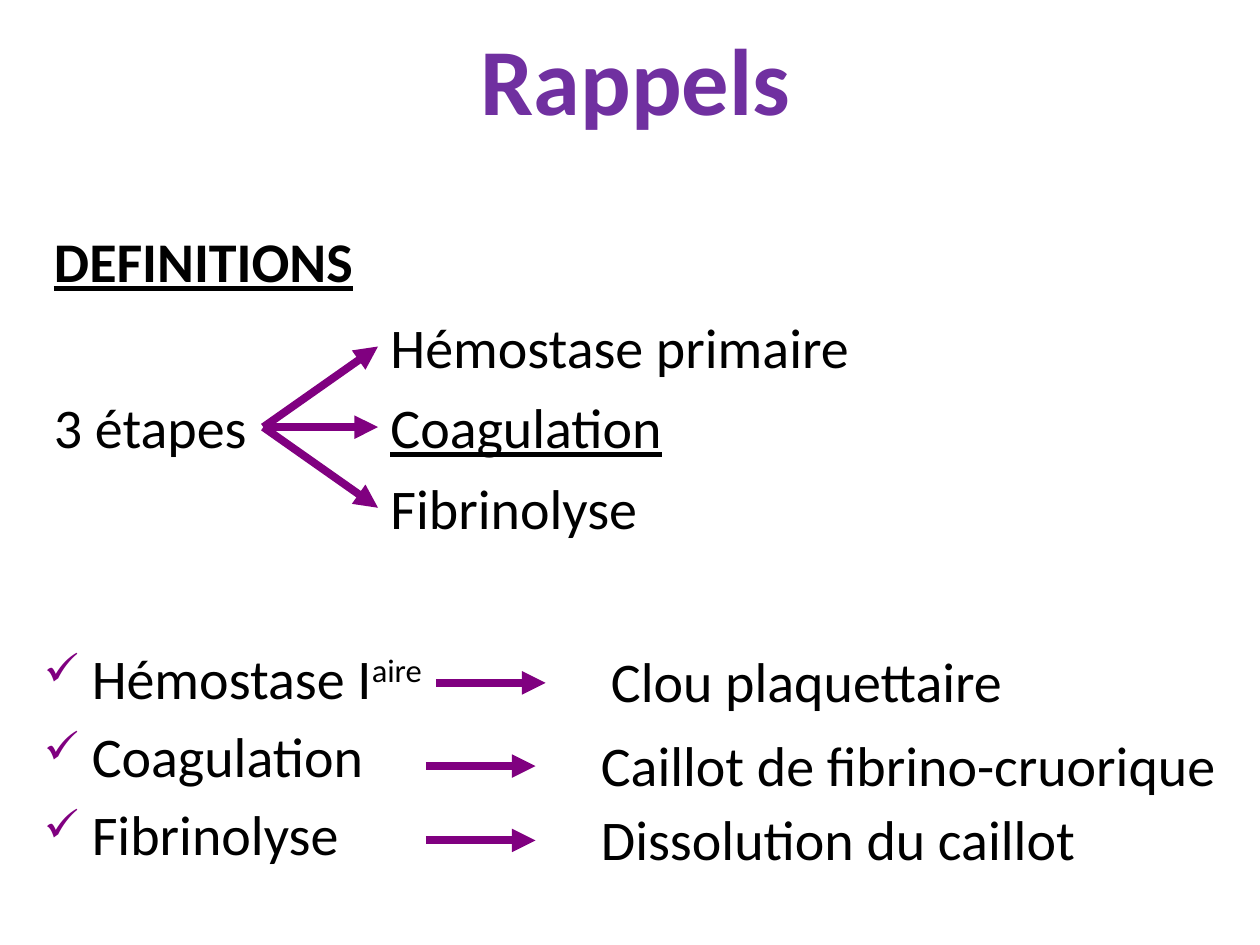
"""Build the "Rappels" slide on the three stages of haemostasis."""
from lxml.etree import SubElement
from pptx import Presentation
from pptx.dml.color import RGBColor
from pptx.enum.shapes import MSO_CONNECTOR as Connector
from pptx.enum.text import MSO_ANCHOR as Anchor, PP_ALIGN as Align
from pptx.oxml.ns import qn
from pptx.util import Inches, Pt

TITLE = "Rappels"
HEADING = "DEFINITIONS"
SOURCE = "3 étapes"
STAGES = [("Hémostase primaire", False), ("Coagulation", True), ("Fibrinolyse", False)]
CHECKLIST = [("Hémostase I", "aire"), ("Coagulation", ""), ("Fibrinolyse", "")]
OUTCOMES = [
    ("Clou plaquettaire", 3.46, 5.42),
    ("Caillot de fibrino-cruorique", 3.38, 6.08),
    ("Dissolution du caillot", 3.38, 6.67),
]

FONT = "Calibri"
BLACK, VIOLET, PURPLE = "000000", "7030A0", "800080"
STAGE_LEFT, STAGE_TOP, STAGE_PITCH = 3, 2.43, 0.64
ARROW_LENGTH, OUTCOME_OFFSET, OUTCOME_HEIGHT = 0.87, 1.29, 0.67
HANGING = 0.38


def color(value):
    return RGBColor.from_string(value)


def add_run(paragraph, text, size=32, fill=BLACK, bold=False, underline=False, raised=False):
    run = paragraph.add_run()
    run.text = text
    font = run.font
    font.name, font.size, font.bold, font.underline = FONT, Pt(size), bold, underline
    font.color.rgb = color(fill)
    if raised:
        run._r.get_or_add_rPr().set("baseline", "30000")


def add_text(slide, box, text="", align=Align.LEFT, anchor=Anchor.TOP, wrap=True, **style):
    shape = slide.shapes.add_textbox(*map(Inches, box))
    frame = shape.text_frame
    frame.word_wrap, frame.vertical_anchor = wrap, anchor
    frame.paragraphs[0].alignment = align
    if text:
        add_run(frame.paragraphs[0], text, **style)
    return shape


def add_arrow(slide, start=(0, 0), end=(0, 0)):
    arrow = slide.shapes.add_connector(Connector.STRAIGHT, *map(Inches, start + end))
    arrow.line.color.rgb = color(PURPLE)
    arrow.line.width = Pt(4.5)
    SubElement(arrow.line._get_or_add_ln(), qn("a:tailEnd"), type="triangle")
    SubElement(arrow._element.spPr, qn("a:effectLst"))
    return arrow


def add_check(paragraph):
    properties = paragraph._p.get_or_add_pPr()
    properties.set("marL", str(Inches(HANGING)))
    properties.set("indent", str(-Inches(HANGING)))
    SubElement(SubElement(properties, qn("a:buClr")), qn("a:srgbClr"), val=PURPLE)
    SubElement(properties, qn("a:buSzPct"), val="80000")
    SubElement(properties, qn("a:buChar"), char="✓")


def add_stages(slide):
    source_box = (0.33, STAGE_TOP + STAGE_PITCH, 1.76, STAGE_PITCH)
    source = add_text(slide, source_box, SOURCE, wrap=False)
    for row, (name, underline) in enumerate(STAGES):
        box = (STAGE_LEFT, STAGE_TOP + row * STAGE_PITCH, 3.88, STAGE_PITCH)
        stage = add_text(slide, box, name, wrap=False, underline=underline)
        arrow = add_arrow(slide)
        arrow.begin_connect(source, 3)
        arrow.end_connect(stage, 1)


def add_checklist(slide):
    frame = add_text(slide, (0.25, 5.06, 3.42, 1.94)).text_frame
    for row, (name, suffix) in enumerate(CHECKLIST):
        paragraph = frame.add_paragraph() if row else frame.paragraphs[0]
        paragraph.space_before = Pt(6 if row else 0)
        add_check(paragraph)
        add_run(paragraph, name)
        if suffix:
            add_run(paragraph, suffix, raised=True)


def add_outcomes(slide):
    for text, left, middle in OUTCOMES:
        add_arrow(slide, (left, middle), (left + ARROW_LENGTH, middle))
        top = middle - OUTCOME_HEIGHT / 2
        add_text(slide, (left + OUTCOME_OFFSET, top, 5.25, OUTCOME_HEIGHT), text)


def main():
    presentation = Presentation()
    presentation.slide_width, presentation.slide_height = Inches(10), Inches(7.5)
    slide = presentation.slides.add_slide(presentation.slide_layouts[6])
    add_text(slide, (0.42, 0.08, 9.25, 1.08), TITLE, align=Align.CENTER,
             anchor=Anchor.MIDDLE, size=54, fill=VIOLET, bold=True)
    add_text(slide, (0.33, 1.75, 3.42, 0.67), HEADING, bold=True, underline=True)
    add_stages(slide)
    add_checklist(slide)
    add_outcomes(slide)
    presentation.save("out.pptx")


if __name__ == "__main__":
    main()
